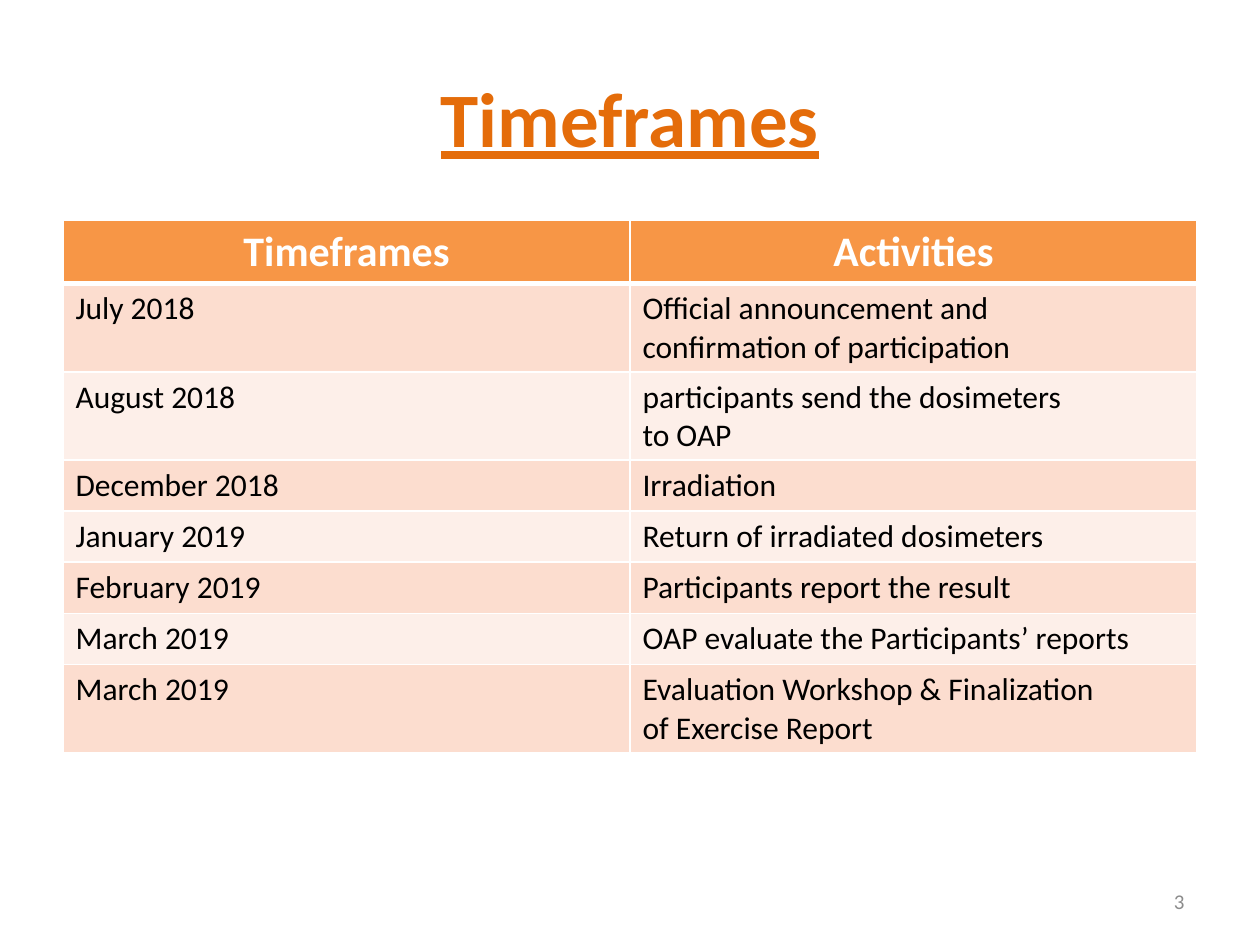
from lxml import etree
from pptx import Presentation
from pptx.dml.color import RGBColor
from pptx.enum.text import MSO_ANCHOR, PP_ALIGN
from pptx.oxml.ns import qn
from pptx.util import Pt

LEFT, CENTER, RIGHT = PP_ALIGN.LEFT, PP_ALIGN.CENTER, PP_ALIGN.RIGHT
MIDDLE = MSO_ANCHOR.MIDDLE
DARK_ORANGE = RGBColor(0xE4, 0x6C, 0x0A)
ORANGE = RGBColor(0xF7, 0x96, 0x46)
BANDS = [RGBColor(0xFD, 0xEF, 0xE9), RGBColor(0xFC, 0xDD, 0xCF)]
WHITE = RGBColor(0xFF, 0xFF, 0xFF)
BLACK = RGBColor(0, 0, 0)
GREY = RGBColor(0x8C, 0x8C, 0x8C)

SCHEDULE = [
    ("Timeframes", "Activities"),
    ("July 2018", "Official announcement and\nconfirmation of participation"),
    ("August 2018", "participants send the dosimeters\nto OAP"),
    ("December 2018", "Irradiation"),
    ("January 2019", "Return of irradiated dosimeters"),
    ("February 2019", "Participants report the result"),
    ("March 2019", "OAP evaluate the Participants’ reports"),
    ("March 2019", "Evaluation Workshop & Finalization\nof Exercise Report"),
]
ROW_HEIGHT = 29.2


def write(frame, text, size, color, align, bold=False, underline=False):
    frame.text = text
    for paragraph in frame.paragraphs:
        paragraph.alignment = align
        font = paragraph.font
        font.name, font.size = "Calibri", Pt(size)
        font.bold, font.underline = bold, underline
        font.color.rgb = color


def add_border(cell, side, width):
    line = etree.SubElement(cell._tc.get_or_add_tcPr(), qn(f"a:ln{side}"), w=str(Pt(width)))
    fill = etree.SubElement(line, qn("a:solidFill"))
    etree.SubElement(fill, qn("a:srgbClr"), val=str(WHITE))


prs = Presentation()
prs.slide_width, prs.slide_height = Pt(720), Pt(540)
slide = prs.slides.add_slide(prs.slide_layouts[6])

title = slide.shapes.add_textbox(Pt(36), Pt(21.6), Pt(648), Pt(90)).text_frame
title.word_wrap = True
title.vertical_anchor = MIDDLE
write(title, "Timeframes", 44, DARK_ORANGE, CENTER, bold=True, underline=True)

schedule = slide.shapes.add_table(
    len(SCHEDULE), 2, Pt(36), Pt(126), Pt(648), Pt(ROW_HEIGHT * len(SCHEDULE))
).table
for row, entries in enumerate(SCHEDULE):
    schedule.rows[row].height = Pt(ROW_HEIGHT)
    for column, entry in enumerate(entries):
        cell = schedule.cell(row, column)
        add_border(cell, "L", 1)
        add_border(cell, "R", 1)
        add_border(cell, "T", 3 if row == 1 else 1)
        add_border(cell, "B", 3 if row == 0 else 1)
        cell.fill.solid()
        if row == 0:
            cell.fill.fore_color.rgb = ORANGE
            write(cell.text_frame, entry, 24, WHITE, CENTER, bold=True)
        else:
            cell.fill.fore_color.rgb = BANDS[row % 2]
            write(cell.text_frame, entry, 18, BLACK, LEFT)

page_number = slide.shapes.add_textbox(Pt(516), Pt(500.5), Pt(168), Pt(28.75)).text_frame
page_number.word_wrap = True
page_number.vertical_anchor = MIDDLE
write(page_number, "3", 12, GREY, RIGHT)

prs.save("out.pptx")
